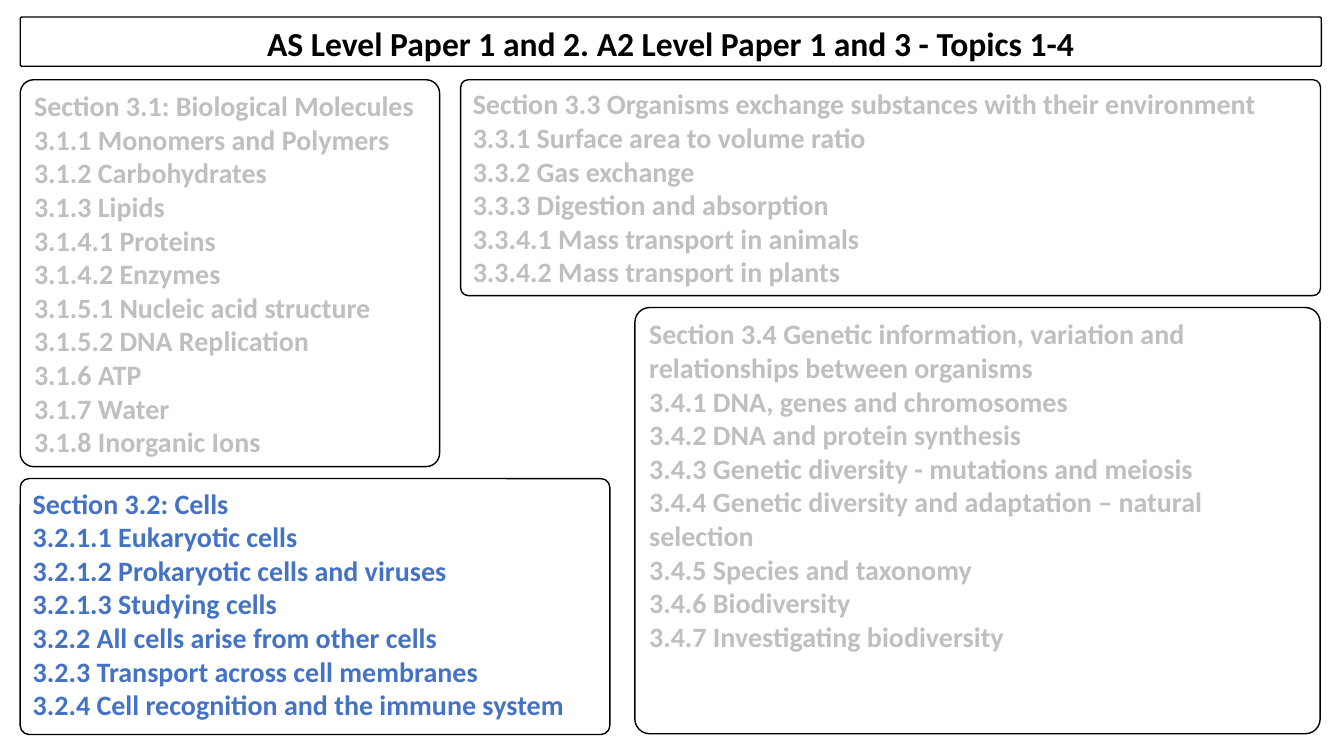
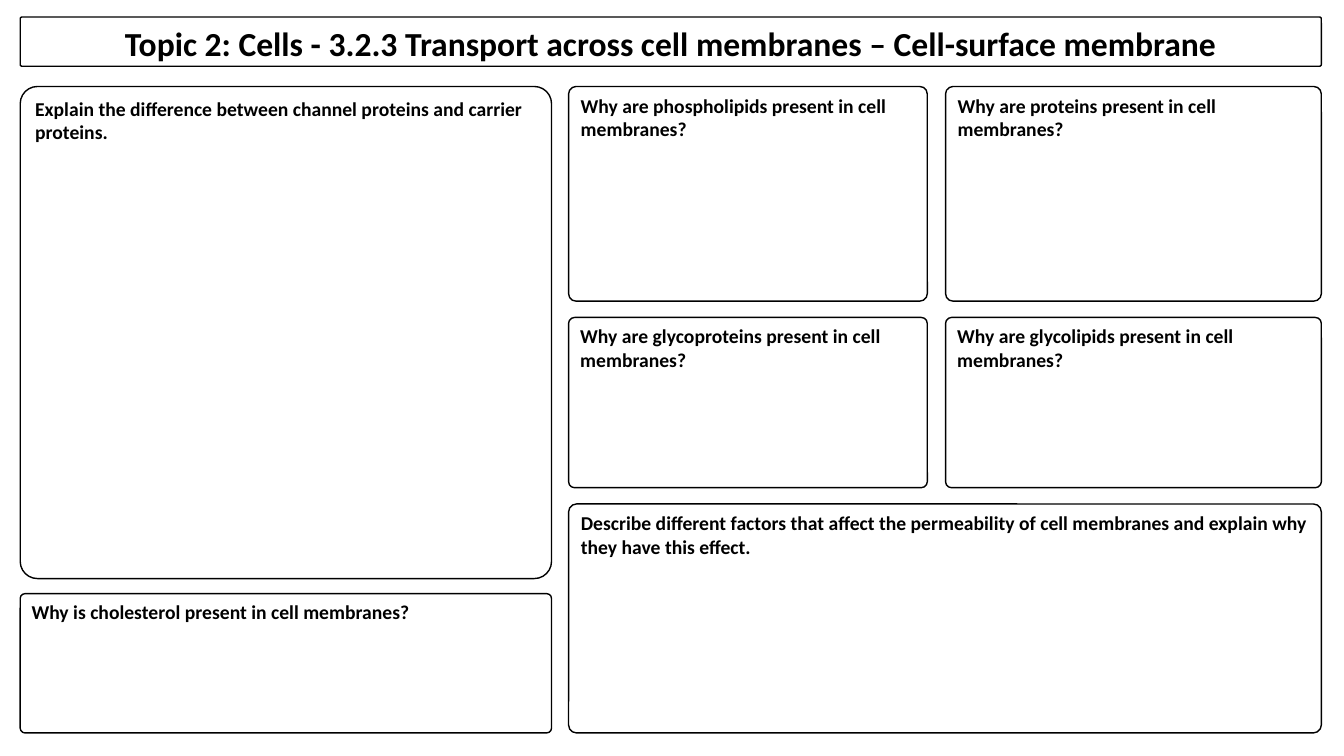
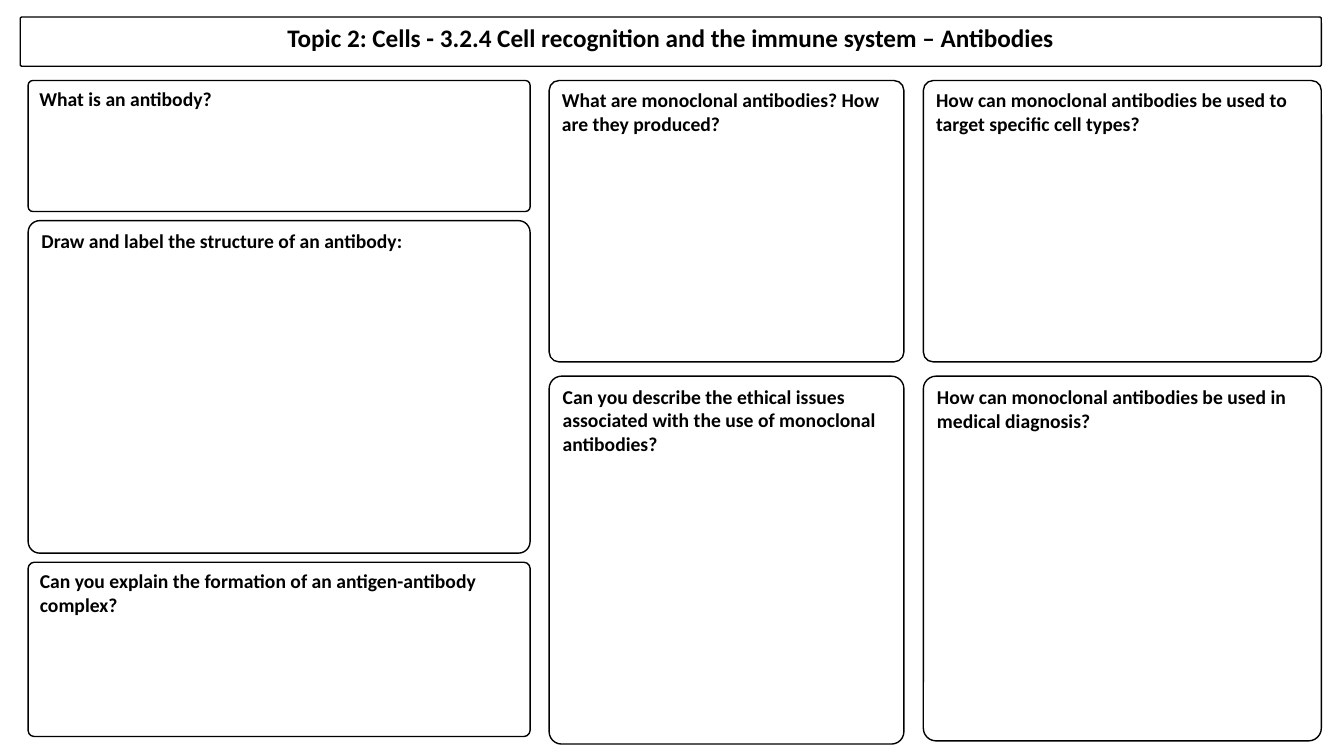
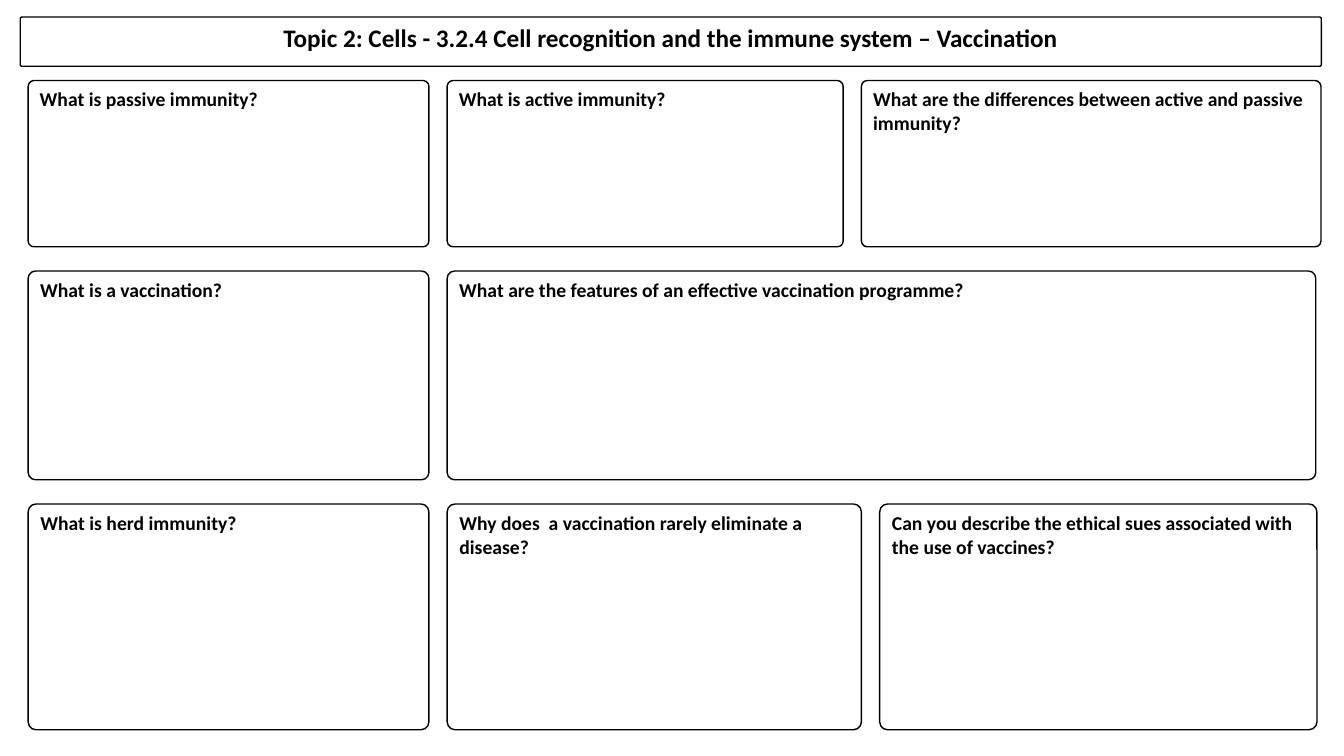
from pptx import Presentation
from pptx.dml.color import RGBColor
from pptx.enum.shapes import MSO_SHAPE as SHAPE
from pptx.enum.text import MSO_ANCHOR as ANCHOR, PP_ALIGN as ALIGN
from pptx.util import Cm, Pt

COLORS = {"black": "000000", "faded": "BFBFBF", "active": "4472C4"}
FONT = "Calibri"
CORNER = 0.035
COLUMN_GAP = 0.46
TITLE_BOX = (0.51, 0.43, 32.79, 1.24)

MOLECULES = [
    "Section 3.1: Biological Molecules",
    "3.1.1 Monomers and Polymers",
    "3.1.2 Carbohydrates",
    "3.1.3 Lipids",
    "3.1.4.1 Proteins",
    "3.1.4.2 Enzymes",
    "3.1.5.1 Nucleic acid structure",
    "3.1.5.2 DNA Replication",
    "3.1.6 ATP",
    "3.1.7 Water",
    "3.1.8 Inorganic Ions",
]
CELLS = [
    "Section 3.2: Cells",
    "3.2.1.1 Eukaryotic cells",
    "3.2.1.2 Prokaryotic cells and viruses",
    "3.2.1.3 Studying cells",
    "3.2.2 All cells arise from other cells",
    "3.2.3 Transport across cell membranes",
    "3.2.4 Cell recognition and the immune system",
]
EXCHANGE = [
    "Section 3.3 Organisms exchange substances with their environment",
    "3.3.1 Surface area to volume ratio",
    "3.3.2 Gas exchange",
    "3.3.3 Digestion and absorption",
    "3.3.4.1 Mass transport in animals",
    "3.3.4.2 Mass transport in plants",
]
GENETICS = [
    "Section 3.4 Genetic information, variation and relationships between organisms",
    "3.4.1 DNA, genes and chromosomes",
    "3.4.2 DNA and protein synthesis",
    "3.4.3 Genetic diversity - mutations and meiosis",
    "3.4.4 Genetic diversity and adaptation – natural selection",
    "3.4.5 Species and taxonomy",
    "3.4.6 Biodiversity",
    "3.4.7 Investigating biodiversity",
]

# Section boxes: left, top, width, height, colour, lines
OVERVIEW_TITLE = "AS Level Paper 1 and 2. A2 Level Paper 1 and 3 - Topics 1-4"
OVERVIEW = [
    (0.51, 2.01, 10.57, 9.75, "faded", MOLECULES),
    (0.51, 12.06, 14.86, 6.45, "active", CELLS),
    (11.61, 2.01, 21.67, 5.44, "faded", EXCHANGE),
    (16, 7.75, 17.27, 10.74, "faded", GENETICS),
]

# Each stack: left, top, row gap, rows; each row: height, [(width, question)]
WORKSHEETS = [
    {
        "title": "Topic 2: Cells - 3.2.3 Transport across cell membranes – Cell-surface membrane",
        "title_size": 24,
        "stacks": [
            (0.51, 2.18, 0.38, [
                (12.4, [(13.39, "Explain the difference between channel proteins and carrier proteins.")]),
                (3.51, [(13.39, "Why is cholesterol present in cell membranes?")]),
            ]),
            (14.33, 2.18, 0.41, [
                (5.41, [(9.04, "Why are phospholipids present in cell membranes?"),
                        (9.47, "Why are proteins present in cell membranes?")]),
                (4.29, [(9.04, "Why are glycoproteins present in cell membranes?"),
                        (9.47, "Why are glycolipids present in cell membranes?")]),
                (5.77, [(18.97, "Describe different factors that affect the permeability of "
                                "cell membranes and explain why they have this effect.")]),
            ]),
        ],
    },
    {
        "title": "Topic 2: Cells - 3.2.4 Cell recognition and the immune system – Antibodies",
        "title_size": 18,
        "stacks": [
            (0.71, 2.03, 0.23, [
                (3.3, [(12.65, "What is an antibody?")]),
                (8.38, [(12.65, "Draw and label the structure of an antibody:")]),
                (4.39, [(12.65, "Can you explain the formation of an antigen-antibody complex?")]),
            ]),
            (13.84, 2.03, 0.36, [
                (7.09, [(8.94, "What are monoclonal antibodies? How are they produced?")]),
                (9.27, [(8.94, "Can you describe the ethical issues associated with the use of "
                               "monoclonal antibodies?")]),
            ]),
            (23.27, 2.03, 0.36, [
                (7.09, [(10.03, "How can monoclonal antibodies be used to target specific cell types?")]),
                (9.19, [(10.03, "How can monoclonal antibodies be used in medical diagnosis?")]),
            ]),
        ],
    },
    {
        "title": "Topic 2: Cells - 3.2.4 Cell recognition and the immune system – Vaccination",
        "title_size": 18,
        "stacks": [
            (0.71, 2.03, 0.61, [
                (4.19, [(10.1, "What is passive immunity?"),
                        (9.98, "What is active immunity?"),
                        (11.58, "What are the differences between active and passive immunity?")]),
                (5.26, [(10.1, "What is a vaccination?"),
                        (21.89, "What are the features of an effective vaccination programme?")]),
                (5.69, [(10.1, "What is herd immunity?"),
                        (10.44, "Why does  a vaccination rarely eliminate a disease?"),
                        (11.02, "Can you describe the ethical sues associated with the use of vaccines?")]),
            ]),
        ],
    },
]


def add_box(slide, box, lines, size, color="black", align=ALIGN.LEFT):
    """Add an outlined rounded box with one bold paragraph per line."""
    sp = slide.shapes.add_shape(SHAPE.ROUNDED_RECTANGLE, *(Cm(v) for v in box))
    sp.adjustments[0] = CORNER
    sp.shadow.inherit = False
    sp.fill.background()
    sp.line.color.rgb = RGBColor.from_string(COLORS["black"])
    sp.line.width = Pt(1)
    tf = sp.text_frame
    tf.word_wrap = True
    tf.vertical_anchor = ANCHOR.TOP
    tf.text = "\n".join(lines)
    for p in tf.paragraphs:
        p.alignment = align
        for r in p.runs:
            r.font.name = FONT
            r.font.size = Pt(size)
            r.font.bold = True
            r.font.color.rgb = RGBColor.from_string(COLORS[color])


def add_titled_slide(prs, title, size):
    slide = prs.slides.add_slide(prs.slide_layouts[6])
    add_box(slide, TITLE_BOX, [title], size, align=ALIGN.CENTER)
    return slide


def add_stack(slide, left, top, row_gap, rows):
    """Place rows of question boxes below one another."""
    for height, cells in rows:
        x = left
        for width, question in cells:
            add_box(slide, (x, top, width, height), [question], 14)
            x += width + COLUMN_GAP
        top += height + row_gap


def main():
    prs = Presentation()
    prs.slide_width, prs.slide_height = Cm(33.87), Cm(19.05)

    overview = add_titled_slide(prs, OVERVIEW_TITLE, 24)
    for *box, color, lines in OVERVIEW:
        add_box(overview, box, lines, 20, color)

    for sheet in WORKSHEETS:
        slide = add_titled_slide(prs, sheet["title"], sheet["title_size"])
        for stack in sheet["stacks"]:
            add_stack(slide, *stack)

    prs.save("out.pptx")


if __name__ == "__main__":
    main()
